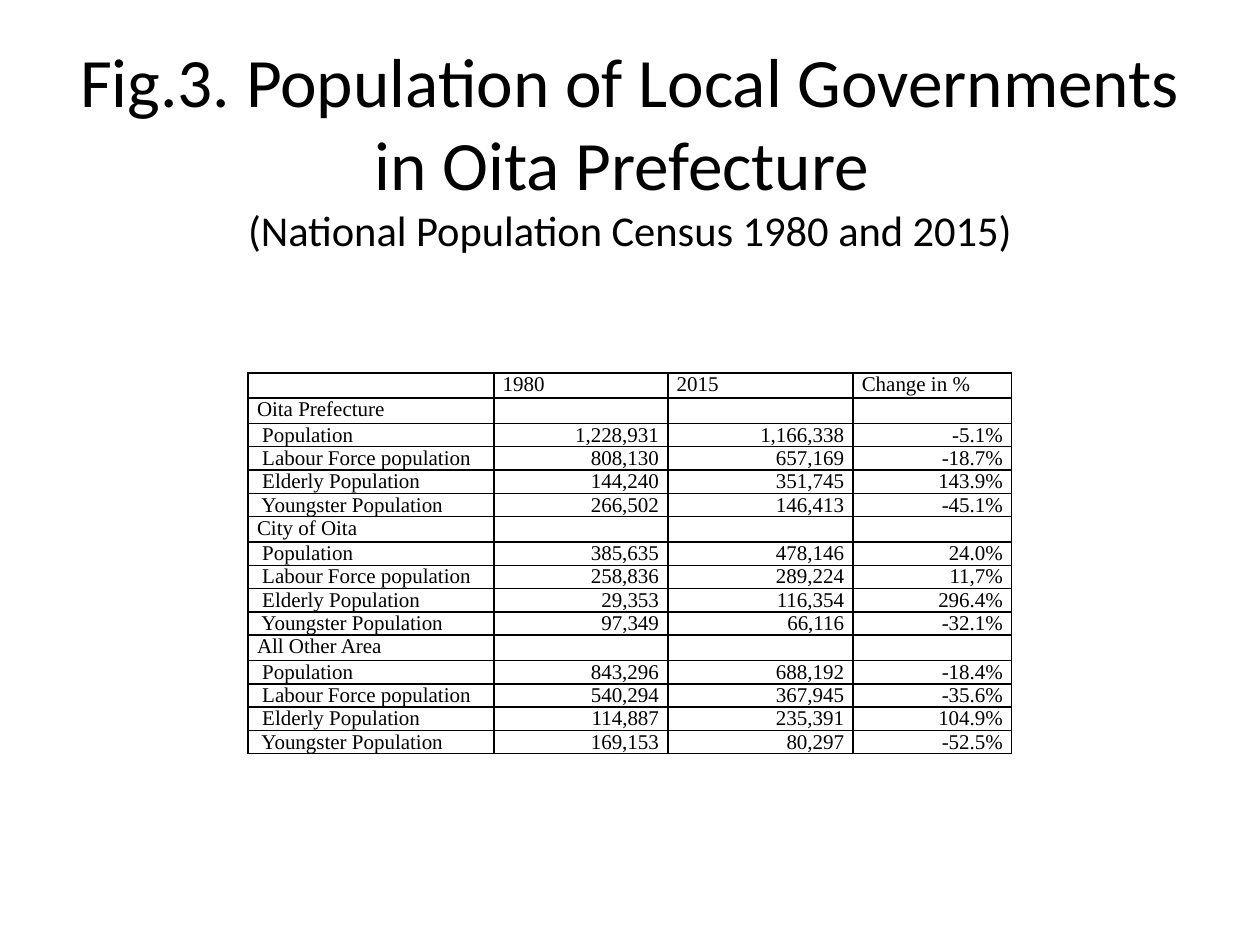
from dataclasses import dataclass

from lxml import etree
from pptx import Presentation
from pptx.dml.color import RGBColor
from pptx.enum.text import MSO_ANCHOR, PP_ALIGN
from pptx.oxml.ns import qn
from pptx.util import Inches, Pt

CENTER, LEFT, RIGHT = PP_ALIGN.CENTER, PP_ALIGN.LEFT, PP_ALIGN.RIGHT
MIDDLE = MSO_ANCHOR.MIDDLE

SLIDE_WIDTH, SLIDE_HEIGHT = Inches(10), Inches(7.5)
INK = "000000"
TITLE_FONT, TABLE_FONT = "Calibri", "Times New Roman"
TABLE_SIZE = 12
LINE_HEIGHT = 13.3
COLUMN_WIDTHS = (1.95, 1.38, 1.47, 1.26)
ROW_HEIGHT = 0.185
CELL_MARGIN = 0.07

HEADER = ("", "1980", "2015", "Change in %")
GROUPS = (" Population", " Labour Force population",
          " Elderly Population", " Youngster Population")


@dataclass
class Area:
    name: str
    figures: tuple[tuple[str, str, str], ...]


AREAS = (
    Area("Oita Prefecture", (
        ("1,228,931", "1,166,338", "-5.1%"),
        ("808,130", "657,169", "-18.7%"),
        ("144,240", "351,745", "143.9%"),
        ("266,502", "146,413", "-45.1%"))),
    Area("City of Oita", (
        ("385,635", "478,146", "24.0%"),
        ("258,836", "289,224", "11,7%"),
        ("29,353", "116,354", "296.4%"),
        ("97,349", "66,116", "-32.1%"))),
    Area("All Other Area", (
        ("843,296", "688,192", "-18.4%"),
        ("540,294", "367,945", "-35.6%"),
        ("114,887", "235,391", "104.9%"),
        ("169,153", "80,297", "-52.5%"))),
)


def color(value: str) -> RGBColor:
    return RGBColor.from_string(value)


def style_font(font, name: str, size: float) -> None:
    font.name, font.size = name, Pt(size)
    font.color.rgb = color(INK)


def add_title(slide) -> None:
    box = slide.shapes.add_textbox(
        round(SLIDE_WIDTH * 0.05), round(SLIDE_HEIGHT * 0.04),
        round(SLIDE_WIDTH * 0.9), round(SLIDE_HEIGHT * 0.23))
    frame = box.text_frame
    frame.word_wrap = True
    frame.vertical_anchor = MIDDLE
    heading, source = frame.paragraphs[0], frame.add_paragraph()
    heading.text = "Fig.3. Population of Local Governments in Oita Prefecture "
    source.text = "(National Population Census 1980 and 2015)"
    for paragraph, size in ((heading, 39.6), (source, 24.3)):
        paragraph.alignment = CENTER
        style_font(paragraph.font, TITLE_FONT, size)


def add_borders(cell) -> None:
    """Put a one-point line on each side, ahead of the cell's fill."""
    properties = cell._tc.get_or_add_tcPr()
    for place, side in enumerate(("a:lnL", "a:lnR", "a:lnT", "a:lnB")):
        line = etree.Element(qn(side), w=str(Pt(1)))
        fill = etree.SubElement(line, qn("a:solidFill"))
        etree.SubElement(fill, qn("a:srgbClr"), val=INK)
        properties.insert(place, line)


def style_paragraph_end(paragraph) -> None:
    """Give the paragraph mark the table's font, so rows stay low."""
    mark = etree.SubElement(paragraph._p, qn("a:endParaRPr"),
                            sz=str(TABLE_SIZE * 100))
    etree.SubElement(mark, qn("a:latin"), typeface=TABLE_FONT)


def fill_cell(cell, text: str, alignment: PP_ALIGN) -> None:
    cell.margin_left = cell.margin_right = Inches(CELL_MARGIN)
    cell.margin_top = cell.margin_bottom = 0
    cell.fill.background()
    add_borders(cell)
    paragraph = cell.text_frame.paragraphs[0]
    paragraph.text = text
    paragraph.alignment = alignment
    paragraph.line_spacing = Pt(LINE_HEIGHT)
    style_font(paragraph.font, TABLE_FONT, TABLE_SIZE)
    style_paragraph_end(paragraph)


def population_rows() -> list[tuple[str, ...]]:
    rows = [HEADER]
    for area in AREAS:
        rows.append((area.name, "", "", ""))
        rows += [(group, *figures)
                 for group, figures in zip(GROUPS, area.figures)]
    return rows


def add_population_table(slide) -> None:
    rows = population_rows()
    table = slide.shapes.add_table(
        len(rows), len(COLUMN_WIDTHS), Inches(1.97), Inches(2.96),
        Inches(sum(COLUMN_WIDTHS)), Inches(ROW_HEIGHT * len(rows))).table
    table.first_row = table.horz_banding = False
    for column, width in zip(table.columns, COLUMN_WIDTHS):
        column.width = Inches(width)
    for r, texts in enumerate(rows):
        table.rows[r].height = Inches(ROW_HEIGHT)
        for c, text in enumerate(texts):
            fill_cell(table.cell(r, c), text, RIGHT if r and c else LEFT)


def main() -> None:
    presentation = Presentation()
    presentation.slide_width = SLIDE_WIDTH
    presentation.slide_height = SLIDE_HEIGHT
    slide = presentation.slides.add_slide(presentation.slide_layouts[6])
    add_title(slide)
    add_population_table(slide)
    presentation.save("out.pptx")


if __name__ == "__main__":
    main()
